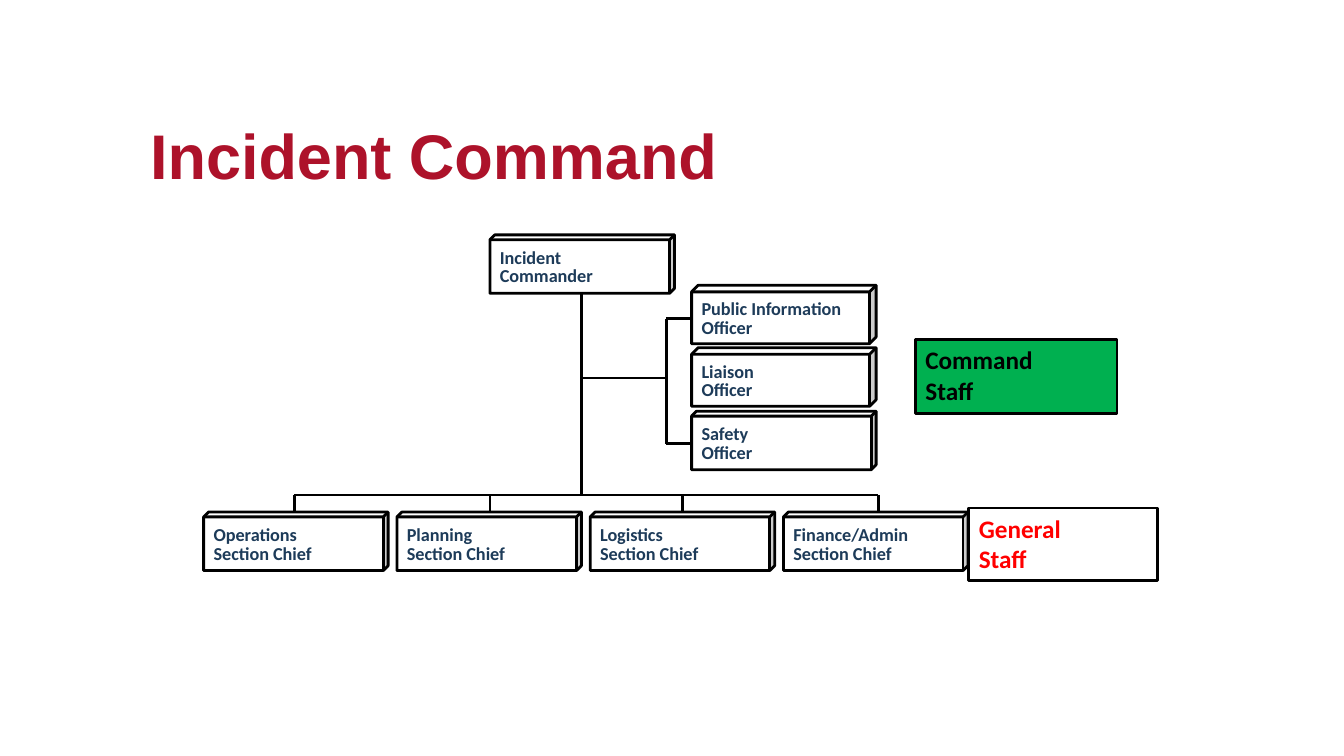
"""Build the Incident Command organisation chart slide."""
from dataclasses import dataclass

from lxml import etree
from pptx import Presentation
from pptx.dml.color import RGBColor
from pptx.enum.shapes import MSO_CONNECTOR as Connector, MSO_SHAPE as Shape
from pptx.enum.text import MSO_ANCHOR as Anchor, PP_ALIGN as Align
from pptx.oxml.ns import qn
from pptx.util import Inches, Pt


@dataclass(frozen=True)
class Theme:
    title_color: str = "AD122A"
    role_color: str = "1D3B59"
    black: str = "000000"
    white: str = "FFFFFF"
    red: str = "FF0000"
    green: str = "00B050"
    title_font: str = "Arial"
    body_font: str = "Calibri"
    title_size: int = 45
    role_size: int = 13
    staff_size: int = 18
    line_width: int = 2


theme = Theme()


def write_lines(frame, text, font_name, size, color, spacing):
    frame.word_wrap = True
    for index, line in enumerate(text.split("\n")):
        paragraph = frame.add_paragraph() if index else frame.paragraphs[0]
        paragraph.text = line
        paragraph.alignment = Align.LEFT
        paragraph.line_spacing = spacing
        paragraph.font.name = font_name
        paragraph.font.size = Pt(size)
        paragraph.font.bold = True
        paragraph.font.color.rgb = RGBColor.from_string(color)


def add_box(kind, left, top, width, height, fill):
    shape = slide.shapes.add_shape(
        kind, Inches(left), Inches(top), Inches(width), Inches(height))
    shape.shadow.inherit = False
    shape.fill.solid()
    shape.fill.fore_color.rgb = RGBColor.from_string(fill)
    shape.line.color.rgb = RGBColor.from_string(theme.black)
    shape.line.width = Pt(theme.line_width)
    return shape


presentation = Presentation()
presentation.slide_width = Inches(13.33)
presentation.slide_height = Inches(7.5)
slide = presentation.slides.add_slide(presentation.slide_layouts[6])

title = slide.shapes.add_textbox(
    Inches(1.39), Inches(0.43), Inches(11.09), Inches(1.49))
title.text_frame.vertical_anchor = Anchor.BOTTOM
title.text_frame.margin_top = title.text_frame.margin_bottom = 0
write_lines(title.text_frame, "Incident Command", theme.title_font,
            theme.title_size, theme.title_color, 0.9)

trunk_x, bracket_x, officer_left = 5.77, 6.61, 6.86
bus_y, chief_y = 4.91, 5.16
bracket_top, bracket_bottom = 3.16, 4.4
drops = [2.92, 4.86, 6.77, 8.71]
lines = [
    (trunk_x, 2.58, trunk_x, bus_y),
    (trunk_x, 3.75, bracket_x, 3.75),
    (bracket_x, bracket_top, bracket_x, bracket_bottom),
    (drops[0], bus_y, drops[-1], bus_y),
]
lines += [(bracket_x, y, officer_left, y) for y in (bracket_top, bracket_bottom)]
lines += [(x, bus_y, x, chief_y) for x in drops]
for ends in lines:
    connector = slide.shapes.add_connector(
        Connector.STRAIGHT, *[Inches(value) for value in ends])
    connector.line.color.rgb = RGBColor.from_string(theme.black)
    connector.line.width = Pt(theme.line_width)
    etree.SubElement(connector.element.spPr, qn("a:effectLst"))

roles = [
    ("Safety\nOfficer", officer_left, 4.08, 0.083),
    ("Liaison\nOfficer", officer_left, 3.45, 0.11),
    ("Public Information\nOfficer", officer_left, 2.83, 0.113),
    ("Incident\nCommander", 4.86, 2.33, 0.083),
]
sections = ["Operations", "Planning", "Logistics", "Finance/Admin"]
roles += [(f"{section}\nSection Chief", 2.02 + 1.917 * index, 5.08, 0.083)
          for index, section in enumerate(sections)]
for text, left, top, depth in roles:
    cube = add_box(Shape.CUBE, left, top, 1.83, 0.58, theme.white)
    cube.adjustments[0] = depth
    frame = cube.text_frame
    frame.vertical_anchor = Anchor.MIDDLE
    frame.margin_bottom = Inches(0.02)
    write_lines(frame, text, theme.body_font, theme.role_size,
                theme.role_color, 0.85)

staff_labels = [
    ("General\nStaff", 9.61, 5.04, 1.87, 0.72, theme.white, theme.red),
    ("Command\nStaff", 9.08, 3.37, 2, 0.73, theme.green, theme.black),
]
for text, left, top, width, height, fill, color in staff_labels:
    label = add_box(Shape.RECTANGLE, left, top, width, height, fill)
    label.text_frame.vertical_anchor = Anchor.TOP
    write_lines(label.text_frame, text, theme.body_font, theme.staff_size,
                color, 1.0)

presentation.save("out.pptx")
